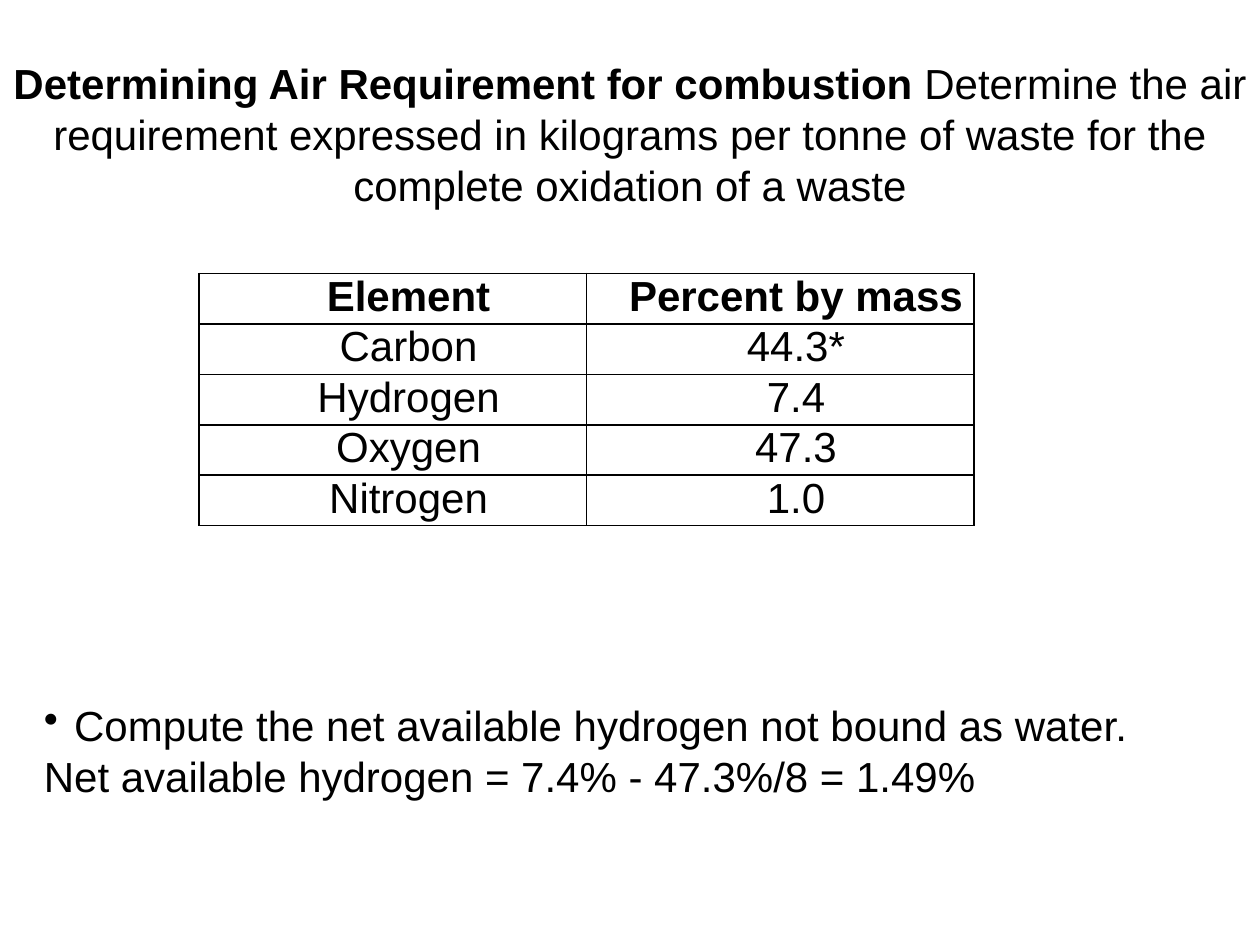
from pptx import Presentation
from pptx.dml.color import RGBColor
from pptx.enum.text import MSO_ANCHOR, PP_ALIGN
from pptx.oxml.ns import qn
from pptx.util import Inches, Pt
from lxml.etree import SubElement

BLACK, WHITE = "000000", "FFFFFF"
LINE_PITCH = Pt(29)

COMPOSITION = [
    ("Element", "Percent by mass"),
    ("Carbon", "44.3*"),
    ("Hydrogen", "7.4"),
    ("Oxygen", "47.3"),
    ("Nitrogen", "1.0"),
]


def color(hex_code):
    return RGBColor.from_string(hex_code)


def style(font, bold=None):
    font.name, font.size, font.bold = "Arial", Pt(24), bold
    font.color.rgb = color(BLACK)


def set_indent(paragraph, left, first):
    properties = paragraph._p.get_or_add_pPr()
    properties.set("marL", str(Inches(left)))
    properties.set("indent", str(Inches(first)))
    return properties


def add_text(slide, left, top, width, height, anchor=MSO_ANCHOR.TOP):
    frame = slide.shapes.add_textbox(
        Inches(left), Inches(top), Inches(width), Inches(height)).text_frame
    frame.word_wrap = True
    frame.vertical_anchor = anchor
    return frame


def add_problem(slide):
    frame = add_text(slide, 0, 0.16, 10, 1.8, MSO_ANCHOR.MIDDLE)
    frame.margin_left = frame.margin_right = Inches(0.05)
    problem = frame.paragraphs[0]
    problem.alignment = PP_ALIGN.CENTER
    problem.line_spacing = LINE_PITCH
    for words, bold in (
        ("Determining Air Requirement for combustion ", True),
        ("Determine the air requirement expressed in kilograms per tonne "
         "of waste for the complete oxidation of a waste", False),
    ):
        run = problem.add_run()
        run.text = words
        style(run.font, bold)


def add_borders(cell):
    properties = cell._tc.get_or_add_tcPr()
    for position, side in enumerate(("a:lnL", "a:lnR", "a:lnT", "a:lnB")):
        border = properties.makeelement(qn(side), {"w": str(Pt(1))})
        fill = SubElement(border, qn("a:solidFill"))
        SubElement(fill, qn("a:srgbClr"), val=BLACK)
        properties.insert(position, border)


def fill_cell(cell, words, bold):
    cell.fill.solid()
    cell.fill.fore_color.rgb = color(WHITE)
    cell.margin_left = cell.margin_right = Inches(0.07)
    cell.margin_top = cell.margin_bottom = 0
    cell.text = words
    entry = cell.text_frame.paragraphs[0]
    entry.alignment = PP_ALIGN.CENTER
    set_indent(entry, 0.5, -0.25)
    style(entry.font, bold)
    add_borders(cell)


def add_composition(slide):
    row_height = Inches(0.37)
    table = slide.shapes.add_table(
        len(COMPOSITION), 2, Inches(1.58), Inches(2.17),
        Inches(6.15), row_height * len(COMPOSITION)).table
    for r, entries in enumerate(COMPOSITION):
        table.rows[r].height = row_height
        for c, words in enumerate(entries):
            fill_cell(table.cell(r, c), words, bold=r == 0)


def add_solution(slide):
    frame = add_text(slide, 0.25, 5.5, 9.61, 0.91)
    frame.text = ("Compute the net available hydrogen not bound as water.\n"
                  "Net available hydrogen = 7.4% - 47.3%/8 = 1.49%")
    for step in frame.paragraphs:
        step.alignment = PP_ALIGN.JUSTIFY
        step.line_spacing = LINE_PITCH
        style(step.font)
    # Bullet on the first step only
    properties = set_indent(frame.paragraphs[0], 0.24, -0.24)
    bullet = properties.makeelement(qn("a:buChar"), {"char": "•"})
    properties.find(qn("a:lnSpc")).addnext(bullet)


def main():
    deck = Presentation()
    deck.slide_width, deck.slide_height = Inches(10), Inches(7.5)
    slide = deck.slides.add_slide(deck.slide_layouts[6])
    slide.background.fill.solid()
    slide.background.fill.fore_color.rgb = color(WHITE)

    # Problem, waste composition, first step of the solution
    add_problem(slide)
    add_composition(slide)
    add_solution(slide)
    deck.save("out.pptx")


if __name__ == "__main__":
    main()
